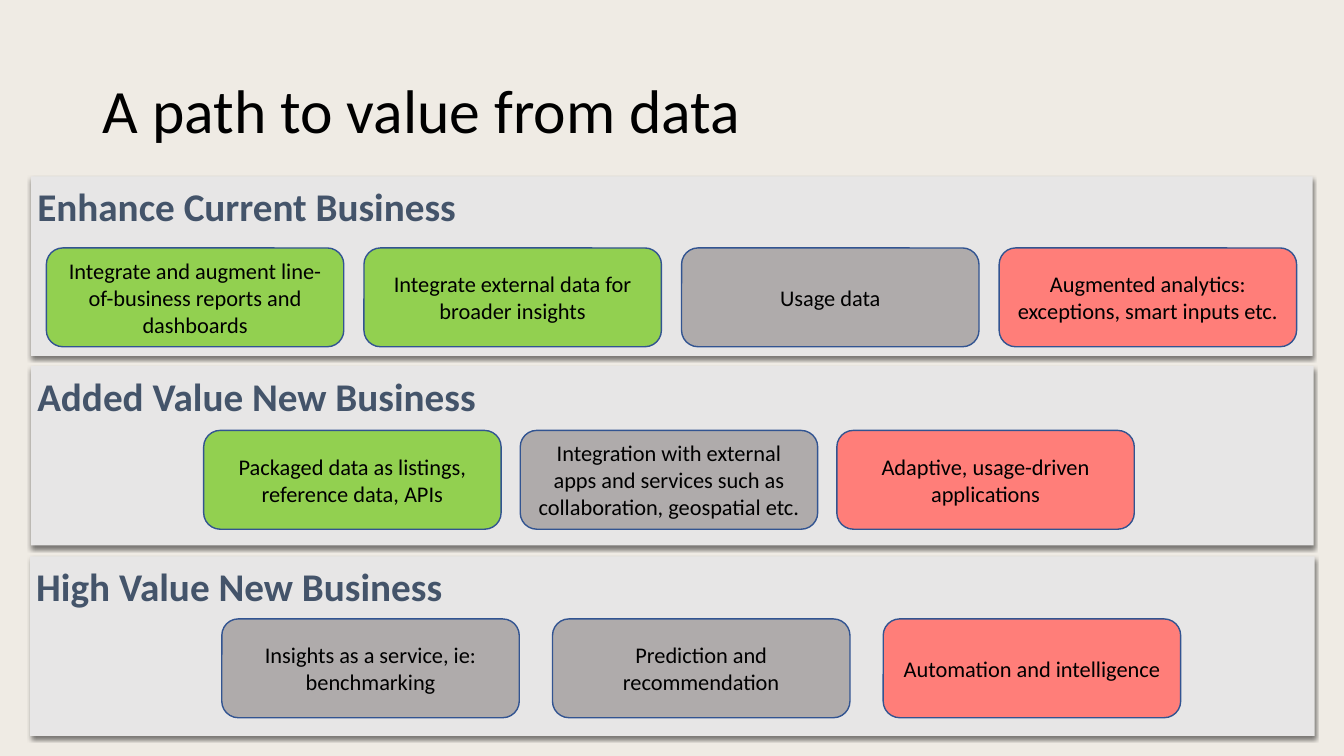
from lxml.etree import SubElement
from pptx import Presentation
from pptx.dml.color import RGBColor
from pptx.enum.shapes import MSO_SHAPE as Shape
from pptx.enum.text import MSO_ANCHOR as Anchor, PP_ALIGN as Align
from pptx.oxml.ns import qn
from pptx.util import Inches, Pt

GREEN, GREY, RED = "92D050", "AFABAB", "FF7E79"

BANDS = [
    ("Enhance Current Business", (0.31, 1.75, 12.71), (0.46, 2.46), 3.15, [
        ("Integrate and augment line-of-business reports and dashboards", GREEN),
        ("Integrate external data for broader insights", GREEN),
        ("Usage data", GREY),
        ("Augmented analytics: exceptions, smart inputs etc.", RED),
    ]),
    ("Added Value New Business", (0.31, 3.63, 12.72), (2.02, 4.27), 3.14, [
        ("Packaged data as listings, reference data, APIs", GREEN),
        ("Integration with external apps and services such as "
         "collaboration, geospatial etc.", GREY),
        ("Adaptive, usage-driven applications", RED),
    ]),
    ("High Value New Business", (0.3, 5.52, 12.74), (2.2, 6.14), 3.28, [
        ("Insights as a service, ie: benchmarking", GREY),
        ("Prediction and recommendation", GREY),
        ("Automation and intelligence", RED),
    ]),
]


def rgb(value):
    return RGBColor.from_string(value)


def write(frame, text, size=16, color="000000", bold=False, align=Align.LEFT,
          anchor=Anchor.MIDDLE, spacing=1.0, font="Calibri"):
    frame.word_wrap = True
    frame.vertical_anchor = anchor
    paragraph = frame.paragraphs[0]
    paragraph.text = text
    paragraph.alignment = align
    paragraph.line_spacing = spacing
    paragraph.font.name = font
    paragraph.font.size = Pt(size)
    paragraph.font.bold = bold
    paragraph.font.color.rgb = rgb(color)


class ValuePathSlide:
    """Hold the slide and the shared style of its bands and cards."""

    band_height = 1.78
    card_size = (2.95, 0.98)
    band_fill, heading_color, outline = "E7E6E6", "44546A", "325491"

    def __init__(self, presentation, background):
        self.slide = presentation.slides.add_slide(presentation.slide_layouts[5])
        fill = self.slide.background.fill
        fill.solid()
        fill.fore_color.rgb = rgb(background)

    def title(self, text):
        title = self.slide.shapes.title
        title.left, title.top = Inches(0.92), Inches(0.4)
        title.width, title.height = Inches(11.5), Inches(1.45)
        write(title.text_frame, text, size=44, spacing=0.9)

    def box(self, kind, left, top, width, height, color):
        shape = self.slide.shapes.add_shape(
            kind, Inches(left), Inches(top), Inches(width), Inches(height))
        shape.shadow.inherit = False
        shape.fill.solid()
        shape.fill.fore_color.rgb = rgb(color)
        return shape

    def band(self, heading, left, top, width):
        shape = self.box(Shape.RECTANGLE, left, top, width,
                         self.band_height, self.band_fill)
        shape.line.fill.background()
        self.drop_shadow(shape)
        frame = shape.text_frame
        frame.margin_left = frame.margin_right = Inches(0.06)
        frame.margin_top = frame.margin_bottom = Inches(0.06)
        write(frame, heading, size=28, color=self.heading_color, bold=True,
              anchor=Anchor.TOP)

    def card(self, text, left, top, color):
        shape = self.box(Shape.ROUNDED_RECTANGLE, left, top, *self.card_size, color)
        shape.line.color.rgb = rgb(self.outline)
        shape.line.width = Pt(1)
        write(shape.text_frame, text, align=Align.CENTER)

    def drop_shadow(self, shape):
        effects = shape._element.spPr.find(qn("a:effectLst"))
        shadow = SubElement(effects, qn("a:outerShdw"), blurRad=str(Pt(3)),
                            dist=str(Pt(2)), dir="5400000", rotWithShape="0")
        color = SubElement(shadow, qn("a:srgbClr"), val="000000")
        SubElement(color, qn("a:alpha"), val="50000")


def main():
    presentation = Presentation()
    presentation.slide_width = Inches(13.33)
    presentation.slide_height = Inches(7.5)
    page = ValuePathSlide(presentation, "EFEBE4")
    page.title("A path to value from data")
    for heading, band_place, (left, top), step, cards in BANDS:
        page.band(heading, *band_place)
        for index, (text, color) in enumerate(cards):
            page.card(text, left + index * step, top, color)
    presentation.save("out.pptx")


if __name__ == "__main__":
    main()
